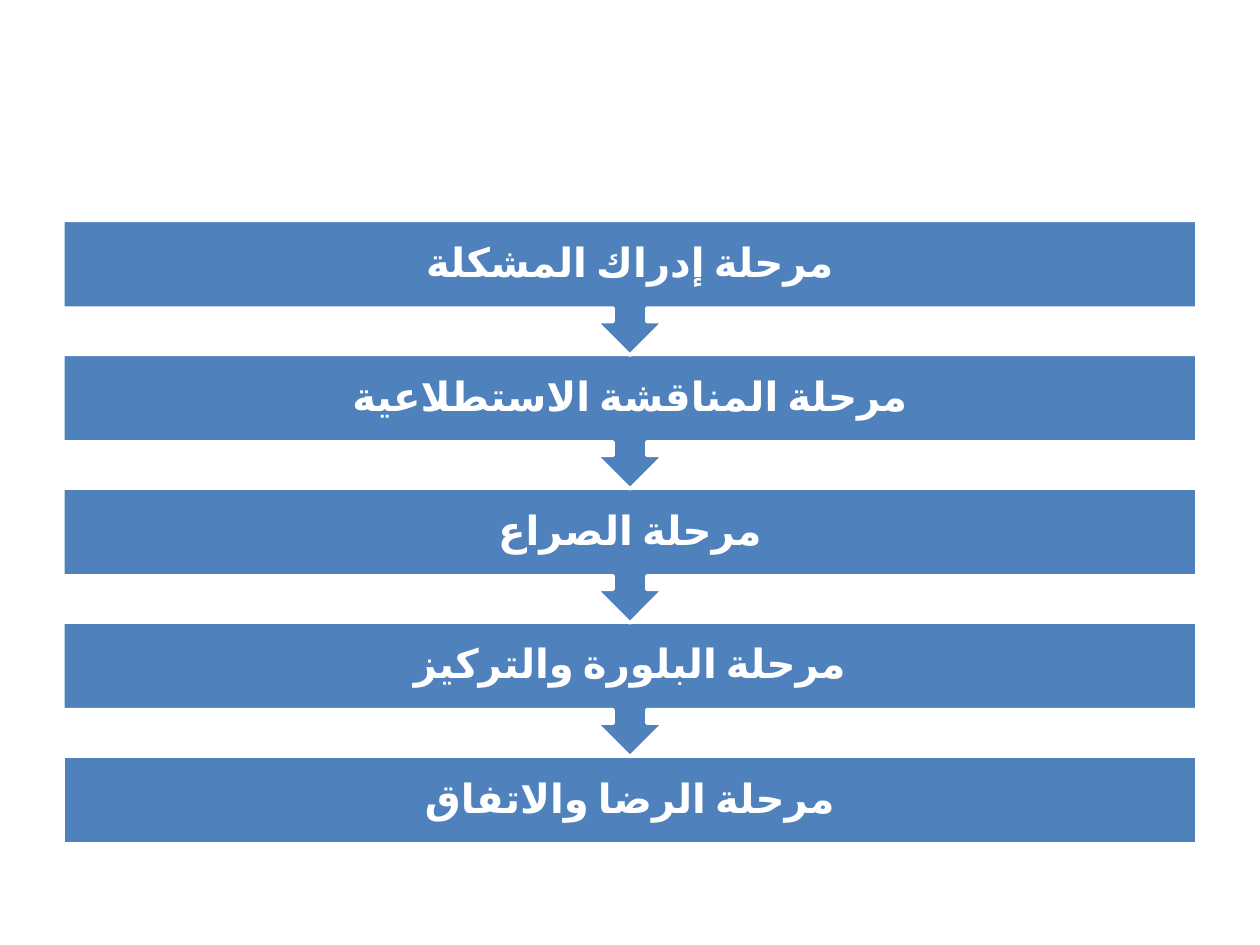
from dataclasses import dataclass

from lxml.etree import SubElement
from pptx import Presentation
from pptx.dml.color import RGBColor
from pptx.enum.lang import MSO_LANGUAGE_ID as Language
from pptx.enum.shapes import MSO_SHAPE as Shape
from pptx.enum.text import MSO_ANCHOR as Anchor, PP_ALIGN as Align
from pptx.oxml.ns import qn
from pptx.util import Inches, Pt


@dataclass(frozen=True)
class Theme:
    bar: RGBColor = RGBColor(0x4F, 0x81, 0xBD)
    light: RGBColor = RGBColor(0xFF, 0xFF, 0xFF)
    font: str = "Calibri"
    size: int = 23
    outline: int = 2


THEME = Theme()
STAGES = [
    "مرحلة إدراك المشكلة",
    "مرحلة المناقشة الاستطلاعية",
    "مرحلة الصراع",
    "مرحلة البلورة والتركيز",
    "مرحلة الرضا والاتفاق",
]
LEFT, TOP, WIDTH = 0.5, 1.75, 9
ROW_STEP, BAR_HEIGHT, CALLOUT_HEIGHT = 1.0625, 0.7, 1.07
INSET = 0.18


def write_label(frame, text):
    """Centre a bold right-to-left label in the shape's text frame."""
    frame.word_wrap = True
    frame.vertical_anchor = Anchor.MIDDLE
    frame.margin_left = frame.margin_right = Inches(INSET)
    frame.margin_top = frame.margin_bottom = Inches(INSET)
    para = frame.paragraphs[0]
    para.text = text
    para.alignment = Align.CENTER
    para.line_spacing = 0.9
    properties = para._p.get_or_add_pPr()
    properties.set("rtl", "1")
    para.font.name = THEME.font
    para.font.size = Pt(THEME.size)
    para.font.bold = True
    para.font.color.rgb = THEME.light
    para.font.language_id = Language.ARABIC
    # Arabic script takes its typeface from the complex-script font.
    SubElement(properties.find(qn("a:defRPr")), qn("a:cs"), typeface=THEME.font)


def add_stage(page, row, text, is_last):
    """Add a bar; every bar but the last points down to the next one."""
    kind = Shape.RECTANGLE if is_last else Shape.DOWN_ARROW_CALLOUT
    height = BAR_HEIGHT if is_last else CALLOUT_HEIGHT
    stage = page.shapes.add_shape(
        kind, Inches(LEFT), Inches(TOP + row * ROW_STEP), Inches(WIDTH), Inches(height)
    )
    stage.shadow.inherit = False
    stage.fill.solid()
    stage.fill.fore_color.rgb = THEME.bar
    stage.line.color.rgb = THEME.light
    stage.line.width = Pt(THEME.outline)
    write_label(stage.text_frame, text)


def main():
    deck = Presentation()
    deck.slide_width, deck.slide_height = Inches(10), Inches(7.5)
    page = deck.slides.add_slide(deck.slide_layouts[6])
    last = len(STAGES) - 1
    # Bottom row first, so that each arrow tip lies over the bar below it.
    for row, text in reversed(list(enumerate(STAGES))):
        add_stage(page, row, text, row == last)
    deck.save("out.pptx")


if __name__ == "__main__":
    main()
